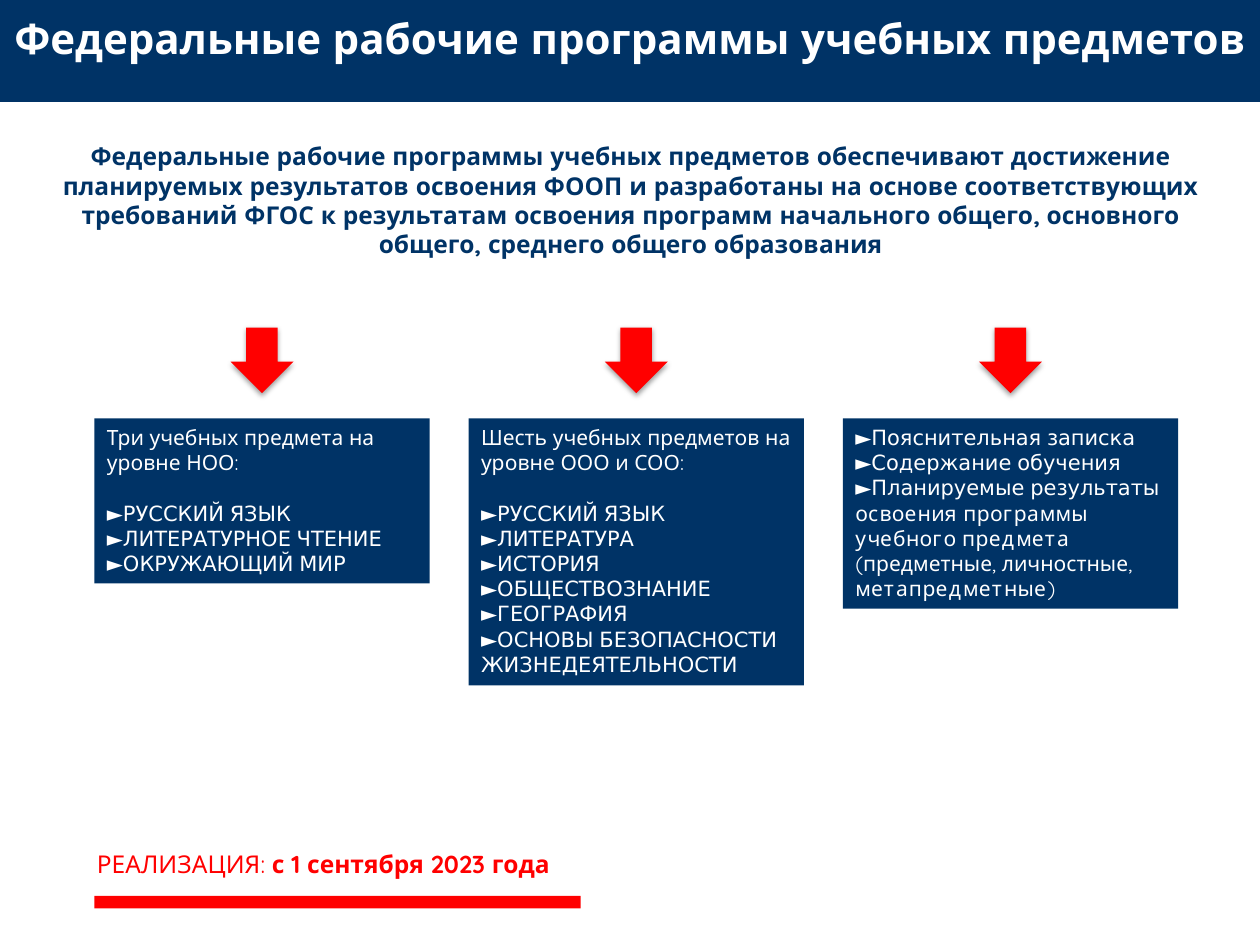
from dataclasses import dataclass

from lxml.etree import SubElement
from pptx import Presentation
from pptx.dml.color import RGBColor
from pptx.enum.shapes import MSO_SHAPE
from pptx.enum.text import MSO_ANCHOR, MSO_AUTO_SIZE, PP_ALIGN
from pptx.oxml.ns import qn
from pptx.util import Inches, Pt


@dataclass(frozen=True)
class Theme:
    navy: RGBColor = RGBColor(0x00, 0x33, 0x66)
    red: RGBColor = RGBColor(0xFF, 0x00, 0x00)
    white: RGBColor = RGBColor(0xFF, 0xFF, 0xFF)
    font: str = "Quicksand"
    title: int = 24
    lead: int = 14
    card: int = 12


THEME = Theme()

TITLE = "Федеральные рабочие программы учебных предметов"
LEAD = (
    "Федеральные рабочие программы учебных предметов обеспечивают достижение "
    "планируемых результатов освоения ФООП и разработаны на основе "
    "соответствующих требований ФГОС к результатам освоения программ "
    "начального общего, основного общего, среднего общего образования"
)
# Heading, items, card height
CARDS = [
    ("Три учебных предмета на уровне НОО:",
     ["РУССКИЙ ЯЗЫК", "ЛИТЕРАТУРНОЕ ЧТЕНИЕ", "ОКРУЖАЮЩИЙ МИР"], 1.31),
    ("Шесть учебных предметов на уровне ООО и СОО:",
     ["РУССКИЙ ЯЗЫК", "ЛИТЕРАТУРА", "ИСТОРИЯ", "ОБЩЕСТВОЗНАНИЕ", "ГЕОГРАФИЯ",
      "ОСНОВЫ БЕЗОПАСНОСТИ ЖИЗНЕДЕЯТЕЛЬНОСТИ"], 2.12),
    (None,
     ["Пояснительная записка", "Содержание обучения",
      "Планируемые результаты освоения программы учебного предмета "
      "(предметные, личностные, метапредметные)"], 1.51),
]
DEADLINE = [("РЕАЛИЗАЦИЯ: ", False), ("с 1 сентября 2023 года", True)]

SLIDE_W, SLIDE_H = 10, 7.5
LEFT, PITCH, CARD_W, CARD_TOP = 0.75, 2.97, 2.66, 3.32
ARROW_W, ARROW_H, ARROW_TOP = 0.5, 0.52, 2.6


def place(s, left, top, width, height):
    s.left, s.top = Inches(left), Inches(top)
    s.width, s.height = Inches(width), Inches(height)


def style(p, size, color, bold=None, align=PP_ALIGN.LEFT):
    p.alignment = align
    p.font.name, p.font.size, p.font.bold = THEME.font, Pt(size), bold
    p.font.color.rgb = color


def add_block(slide, kind, box, color):
    s = slide.shapes.add_shape(kind, *map(Inches, box))
    s.shadow.inherit = False
    s.fill.solid()
    s.fill.fore_color.rgb = color
    s.line.fill.background()
    return s


def add_soft_shadow(s):
    effects = s._element.spPr.find(qn("a:effectLst"))
    shadow = SubElement(effects, qn("a:outerShdw"), blurRad=str(Pt(3.1)),
                        dist=str(Pt(1.6)), dir="5400000", rotWithShape="0")
    color = SubElement(shadow, qn("a:srgbClr"), val="000000")
    SubElement(color, qn("a:alpha"), val="38000")


def fill_placeholder(s, text, size, color):
    tf = s.text_frame
    tf.text = text
    tf.word_wrap = True
    tf.auto_size = MSO_AUTO_SIZE.NONE
    tf.vertical_anchor = MSO_ANCHOR.TOP
    tf.margin_left = tf.margin_right = tf.margin_top = tf.margin_bottom = Inches(0.1)
    p = tf.paragraphs[0]
    p.space_before = Pt(0)
    style(p, size, color, True, PP_ALIGN.CENTER)
    return p


def add_card(slide, column, heading, items, height):
    left = LEFT + column * PITCH
    arrow_left = left + (CARD_W - ARROW_W) / 2
    arrow = add_block(slide, MSO_SHAPE.DOWN_ARROW,
                      (arrow_left, ARROW_TOP, ARROW_W, ARROW_H), THEME.red)
    add_soft_shadow(arrow)

    card = add_block(slide, MSO_SHAPE.RECTANGLE,
                     (left, CARD_TOP, CARD_W, height), THEME.navy)
    tf = card.text_frame
    tf.word_wrap = True
    tf.vertical_anchor = MSO_ANCHOR.TOP
    lines = ([heading] if heading else []) + [f"►{item}" for item in items]
    tf.text = "\n".join(lines)
    for p in tf.paragraphs:
        style(p, THEME.card, THEME.white)
    if heading:
        tf.paragraphs[1].space_before = Pt(THEME.card * 1.2)


def main():
    prs = Presentation()
    prs.slide_width, prs.slide_height = Inches(SLIDE_W), Inches(SLIDE_H)
    slide = prs.slides.add_slide(prs.slide_layouts[1])

    title, body = slide.placeholders
    place(title, 0, 0, SLIDE_W, 0.81)
    title.fill.solid()
    title.fill.fore_color.rgb = THEME.navy
    fill_placeholder(title, TITLE, THEME.title, THEME.white)

    place(body, 0.28, 1.02, 9.45, 5.9)
    pPr = fill_placeholder(body, LEAD, THEME.lead, THEME.navy)._p.get_or_add_pPr()
    pPr.set("marL", "0")
    pPr.set("indent", "0")
    pPr.insert_element_before(pPr.makeelement(qn("a:buNone")),
                              "a:tabLst", "a:defRPr", "a:extLst")

    for column, card in enumerate(CARDS):
        add_card(slide, column, *card)

    deadline = slide.shapes.add_textbox(*map(Inches, (0.67, 6.69, 4.18, 0.34)))
    deadline.text_frame.word_wrap = True
    p = deadline.text_frame.paragraphs[0]
    style(p, THEME.lead, THEME.red)
    for text, bold in DEADLINE:
        r = p.add_run()
        r.text, r.font.bold = text, bold
    add_block(slide, MSO_SHAPE.RECTANGLE, (LEFT, 7.11, 3.86, 0.1), THEME.red)

    prs.save("out.pptx")


if __name__ == "__main__":
    main()
